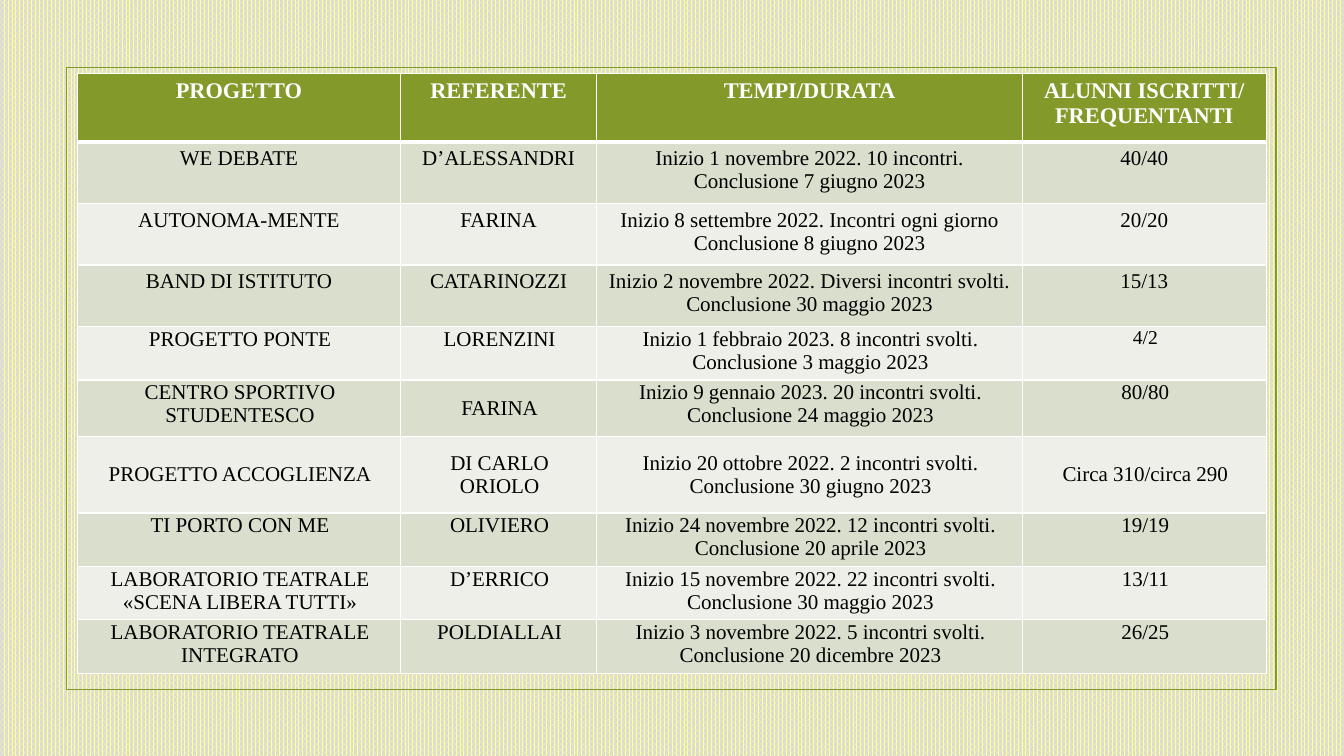
from lxml import etree
from pptx import Presentation
from pptx.dml.color import RGBColor
from pptx.enum.dml import MSO_PATTERN
from pptx.enum.shapes import MSO_SHAPE
from pptx.enum.text import MSO_ANCHOR, PP_ALIGN
from pptx.oxml.ns import qn
from pptx.util import Inches, Pt

# Content
HEADER = ("PROGETTO", "REFERENTE", "TEMPI/DURATA", "ALUNNI ISCRITTI/\nFREQUENTANTI")
PROJECTS = [
    ("WE DEBATE", "D’ALESSANDRI",
     "Inizio 1 novembre 2022. 10 incontri. Conclusione 7 giugno 2023", "40/40"),
    ("AUTONOMA-MENTE", "FARINA",
     "Inizio 8 settembre 2022. Incontri ogni giorno Conclusione 8 giugno 2023", "20/20"),
    ("BAND DI ISTITUTO", "CATARINOZZI",
     "Inizio 2 novembre 2022. Diversi incontri svolti. Conclusione 30 maggio 2023", "15/13"),
    ("PROGETTO PONTE", "LORENZINI",
     "Inizio 1 febbraio 2023. 8 incontri svolti. Conclusione 3 maggio 2023", "4/2"),
    ("CENTRO SPORTIVO STUDENTESCO", "FARINA",
     "Inizio 9 gennaio 2023. 20 incontri svolti. Conclusione 24 maggio 2023", "80/80"),
    ("PROGETTO ACCOGLIENZA", "DI CARLO\nORIOLO",
     "Inizio 20 ottobre 2022. 2 incontri svolti. Conclusione 30 giugno 2023",
     "Circa 310/circa 290"),
    ("TI PORTO CON ME", "OLIVIERO",
     "Inizio 24 novembre 2022. 12 incontri svolti. Conclusione 20 aprile 2023", "19/19"),
    ("LABORATORIO TEATRALE «SCENA LIBERA TUTTI»", "D’ERRICO",
     "Inizio 15 novembre 2022. 22 incontri svolti. Conclusione 30 maggio 2023", "13/11"),
    ("LABORATORIO TEATRALE INTEGRATO", "POLDIALLAI",
     "Inizio 3 novembre 2022. 5 incontri svolti. Conclusione 20 dicembre 2023", "26/25"),
]
ROWS = [HEADER] + PROJECTS

# Layout
COLUMN_WIDTHS = (3.2, 1.95, 4.22, 2.42)
ROW_HEIGHTS = (0.68, 0.61, 0.61, 0.61, 0.53, 0.56, 0.76, 0.53, 0.53, 0.53)
FIRST_TIGHT_ROW = 4
WIDE_INSETS = (0.1, 0.05, 0.1, 0.05)
TIGHT_INSETS = (0.04, 0.01, 0.02, 0.01)
MIDDLE_CELLS = {(5, 1), (6, 0), (6, 1), (6, 2), (6, 3)}
SMALL_CELL = (4, 3)

# Style
FONT = "Times New Roman"
GREEN = RGBColor(0x83, 0x99, 0x2A)
BAND_DARK = RGBColor(0xD9, 0xDE, 0xCD)
BAND_LIGHT = RGBColor(0xED, 0xEF, 0xE8)
YELLOW = RGBColor(0xFF, 0xFF, 0x99)
GREY = RGBColor(0xD9, 0xD9, 0xD9)
WHITE = RGBColor(0xFF, 0xFF, 0xFF)
BLACK = RGBColor(0, 0, 0)
CENTER = PP_ALIGN.CENTER
TOP, MIDDLE = MSO_ANCHOR.TOP, MSO_ANCHOR.MIDDLE


def write_text(frame, text, size=15, color=BLACK, bold=False):
    frame.text = text
    for paragraph in frame.paragraphs:
        paragraph.alignment = CENTER
        for run in paragraph.runs:
            run.font.name = FONT
            run.font.size = Pt(size)
            run.font.bold = bold
            run.font.color.rgb = color


def draw_borders(cell, **widths):
    properties = cell._tc.get_or_add_tcPr()
    for side in "LRTB":
        border = etree.SubElement(properties, qn(f"a:ln{side}"),
                                  w=str(Pt(widths.get(side, 1))))
        solid = etree.SubElement(border, qn("a:solidFill"))
        etree.SubElement(solid, qn("a:srgbClr"), val=str(WHITE))


def set_insets(cell, insets):
    (cell.margin_left, cell.margin_top,
     cell.margin_right, cell.margin_bottom) = map(Inches, insets)


def main():
    prs = Presentation()
    prs.slide_width, prs.slide_height = Inches(13.33), Inches(7.5)
    slide = prs.slides.add_slide(prs.slide_layouts[6])

    # Woven background
    background = slide.background.fill
    background.patterned()
    background.pattern = MSO_PATTERN.PERCENT_75
    background.fore_color.rgb = YELLOW
    background.back_color.rgb = GREY

    # Green frame
    frame = slide.shapes.add_shape(MSO_SHAPE.RECTANGLE, Inches(0.66), Inches(0.67),
                                   Inches(12), Inches(6.17))
    frame.shadow.inherit = False
    frame.fill.background()
    frame.line.color.rgb = GREEN
    frame.line.width = Pt(1.25)

    # Project table
    projects = slide.shapes.add_table(
        len(ROWS), len(HEADER), Inches(0.77), Inches(0.73),
        Inches(sum(COLUMN_WIDTHS)), Inches(sum(ROW_HEIGHTS))).table
    for column, width in zip(projects.columns, COLUMN_WIDTHS):
        column.width = Inches(width)
    for row, height in zip(projects.rows, ROW_HEIGHTS):
        row.height = Inches(height)

    for r, texts in enumerate(ROWS):
        for c, text in enumerate(texts):
            cell = projects.cell(r, c)
            set_insets(cell, TIGHT_INSETS if r >= FIRST_TIGHT_ROW else WIDE_INSETS)
            cell.vertical_anchor = MIDDLE if (r, c) in MIDDLE_CELLS else TOP
            # The header and the first project share a thick edge
            draw_borders(cell, B=3 if r == 0 else 1, T=3 if r == 1 else 1)
            cell.fill.solid()
            if r == 0:
                cell.fill.fore_color.rgb = GREEN
                write_text(cell.text_frame, text, size=16, color=WHITE, bold=True)
            else:
                cell.fill.fore_color.rgb = BAND_DARK if r % 2 else BAND_LIGHT
                write_text(cell.text_frame, text, size=14 if (r, c) == SMALL_CELL else 15)

    prs.save("out.pptx")


if __name__ == "__main__":
    main()
